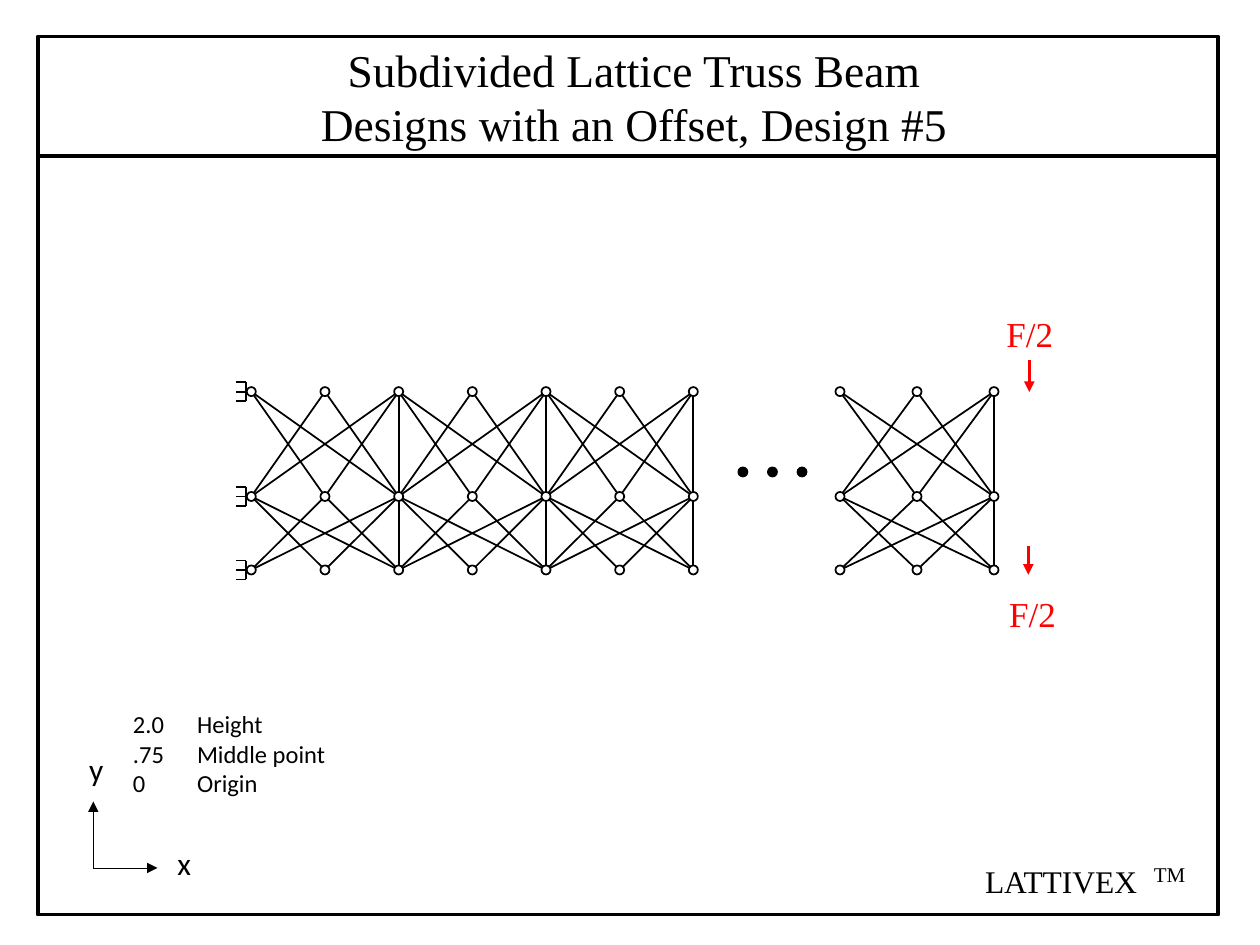
"""Build the slide of a subdivided lattice truss beam with an offset."""
from itertools import permutations
from lxml import etree
from pptx import Presentation
from pptx.dml.color import RGBColor
from pptx.enum import shapes, text
from pptx.oxml import ns
from pptx.util import Pt

BLACK = RGBColor(0, 0, 0)
WHITE = RGBColor(255, 255, 255)
RED = RGBColor(255, 0, 0)
SERIF, SANS = "Times New Roman", "Calibri"

deck = Presentation()
deck.slide_width, deck.slide_height = Pt(720), Pt(540)
slide = deck.slides.add_slide(deck.slide_layouts[6])
items = slide.shapes


def draw(x1, y1, x2, y2, wide=1, color=BLACK, head=False):
    line = items.add_connector(
        shapes.MSO_CONNECTOR.STRAIGHT, Pt(x1), Pt(y1), Pt(x2), Pt(y2))
    line.line.color.rgb = color
    line.line.width = Pt(wide)
    props = line._element.spPr
    if head:
        etree.SubElement(props.find(ns.qn("a:ln")), ns.qn("a:tailEnd"), type="triangle")
    etree.SubElement(props, ns.qn("a:effectLst"))


def write(x, y, w, h, words, size, face, color=BLACK):
    box = items.add_textbox(Pt(x), Pt(y), Pt(w), Pt(h))
    frame = box.text_frame
    frame.word_wrap = True
    frame.text = words
    for para in frame.paragraphs:
        para.font.size = Pt(size)
        para.font.name = face
        para.font.color.rgb = color
    return frame


# frame and title rule
border = items.add_shape(
    shapes.MSO_SHAPE.RECTANGLE, Pt(21.6), Pt(20.9), Pt(674.6), Pt(501.8))
border.shadow.inherit = False
border.fill.background()
border.line.color.rgb = BLACK
border.line.width = Pt(2)
draw(21.6, 89.2, 696.2, 89.2, 2)

rows = [223.8, 283.7, 325.7]
main = [143.6 + 42.1 * i for i in range(7)]
last = [480 + 44 * i for i in range(3)]
bays = [main[i:i + 3] for i in (0, 2, 4)] + [last]

for bay in bays:
    for high, low in zip(rows, rows[1:]):
        for start, end in permutations(bay, 2):
            draw(start, high, end, low)
        draw(bay[2], high, bay[2], low)

for y in rows:
    wall = main[0] - 3
    draw(wall, y - 5.4, wall, y + 5.4)
    for gap in (-5.4, 0, 5.4):
        draw(wall - 5.5, y + gap, wall, y + gap)

nodes = [(x, y, WHITE) for x in main + last for y in rows]
dots = [(424.5 + 16.9 * i, 269.7, BLACK) for i in range(3)]
for x, y, color in nodes + dots:
    node = items.add_shape(
        shapes.MSO_SHAPE.OVAL, Pt(x - 2.6), Pt(y - 2.6), Pt(5.2), Pt(5.2))
    node.shadow.inherit = False
    node.fill.solid()
    node.fill.fore_color.rgb = color
    node.line.color.rgb = BLACK
    node.line.width = Pt(1)

for x, top, tip, left, y in ((588.2, 206, 224, 568, 175), (587.6, 311.8, 328.4, 569.6, 334.8)):
    draw(x, top, x, tip, 2, RED, True)
    write(left, y, 50.4, 31.5, "F/2", 20, SERIF, RED)

for x, y, name, left, top in ((90, 496, "x", 94.3, 478.8), (53.3, 458, "y", 43.9, 424.8)):
    draw(53.3, 496, x, y, 0.5, BLACK, True)
    write(left, top, 22.3, 28.8, name, 18, SANS)

title = write(174, 20.2, 377, 70.6,
              "Subdivided Lattice Truss Beam Designs with an Offset, Design #5", 26, SERIF)
title.paragraphs[0].alignment = text.PP_ALIGN.CENTER

key = write(76, 401.8, 125.6, 58.3,
            "2.0\tHeight\n.75\tMiddle point\n0\tOrigin", 14, SANS)
key.margin_left = 0
for para in key.paragraphs:
    tabs = etree.Element(ns.qn("a:tabLst"))
    etree.SubElement(tabs, ns.qn("a:tab"), pos=str(Pt(36.6)), algn="l")
    para._p.get_or_add_pPr().insert(0, tabs)

write(555.8, 488.9, 112, 28.8, "LATTIVEX", 18, SERIF)
write(652.3, 488.5, 36.7, 22, "TM", 12, SERIF)

deck.save("out.pptx")
